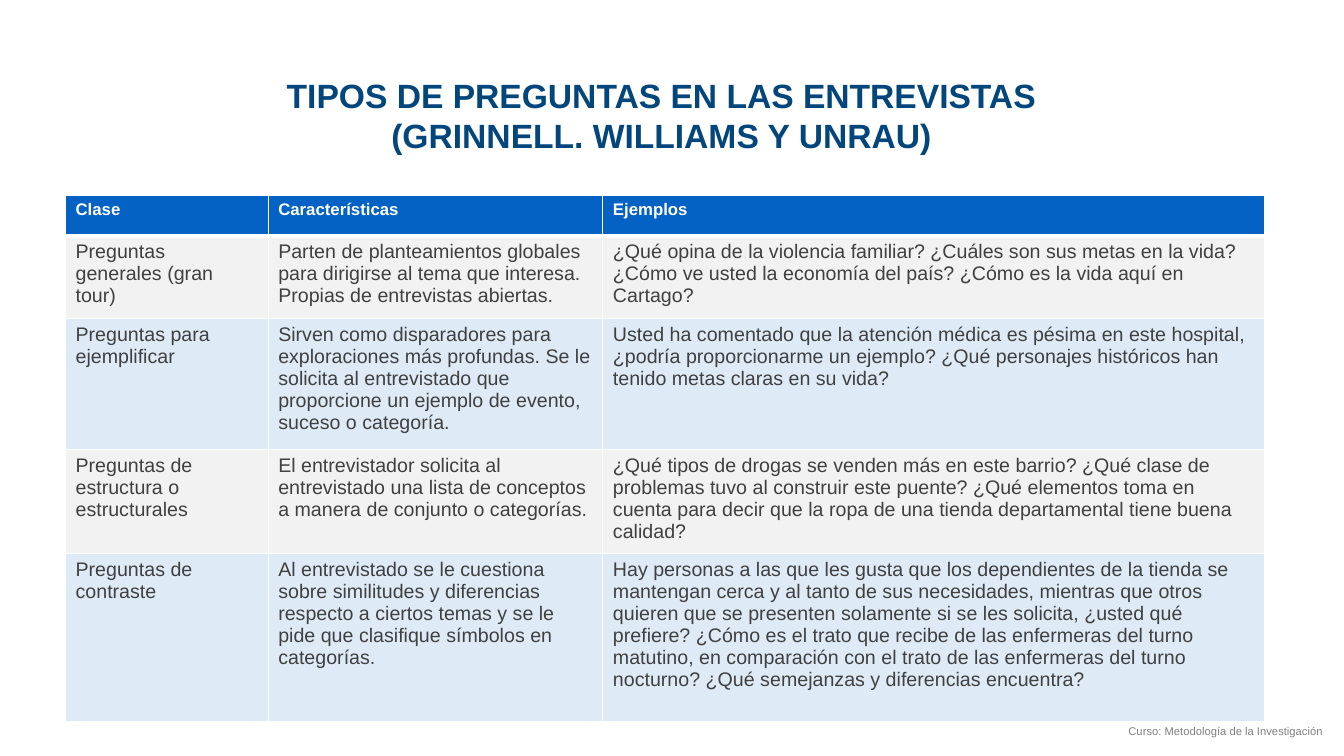
from lxml.etree import SubElement
from pptx import Presentation
from pptx.dml.color import RGBColor
from pptx.enum.text import MSO_ANCHOR, PP_ALIGN
from pptx.oxml.ns import qn
from pptx.util import Inches, Pt

TITLE = "TIPOS DE PREGUNTAS EN LAS ENTREVISTAS\v(GRINNELL. WILLIAMS Y UNRAU)"
FOOTER = "Curso: Metodología de la Investigación"
ROWS = [
    ("Clase", "Características", "Ejemplos"),
    (
        "Preguntas\ngenerales (gran tour)",
        "Parten de planteamientos globales para dirigirse al tema que interesa.\n"
        "Propias de entrevistas abiertas.",
        "¿Qué opina de la violencia familiar? ¿Cuáles son sus metas en la vida? "
        "¿Cómo ve usted la economía del país? ¿Cómo es la vida aquí en Cartago?",
    ),
    (
        "Preguntas para ejemplificar",
        "Sirven como disparadores para\n"
        "exploraciones más profundas. Se le solicita al entrevistado que\n"
        "proporcione un ejemplo de evento, suceso o categoría.",
        "Usted ha comentado que la atención médica es pésima en este hospital, "
        "¿podría proporcionarme un ejemplo? ¿Qué personajes históricos han "
        "tenido metas claras en su vida?",
    ),
    (
        "Preguntas de\nestructura o\nestructurales",
        "El entrevistador solicita al\n"
        "entrevistado una lista de conceptos a manera de conjunto o categorías.",
        "¿Qué tipos de drogas se venden más en este barrio? ¿Qué clase de "
        "problemas tuvo al construir este puente? ¿Qué elementos toma en cuenta "
        "para decir que la ropa de una tienda departamental tiene buena calidad?",
    ),
    (
        "Preguntas de\ncontraste",
        "Al entrevistado se le cuestiona\nsobre similitudes y diferencias\n"
        "respecto a ciertos temas y se le\npide que clasifique símbolos en\n"
        "categorías.",
        "Hay personas a las que les gusta que los dependientes de la tienda se "
        "mantengan cerca y al tanto de sus necesidades, mientras que otros "
        "quieren que se presenten solamente si se les solicita, ¿usted qué "
        "prefiere? ¿Cómo es el trato que recibe de las enfermeras del turno "
        "matutino, en comparación con el trato de las enfermeras del turno "
        "nocturno? ¿Qué semejanzas y diferencias encuentra?",
    ),
]
COL_WIDTHS = (2.01, 3.32, 6.56)
ROW_HEIGHTS = (0.4, 0.82, 1.3, 1.01, 1.66)

THEME = {
    "font": "Arial",
    "title": (24, "02467C", True),
    "head": (12, "FFFFFF", True),
    "body": (14, "404040", False),
    "footer": (8, "808080", False),
    "head_fill": "0362C3",
    "bands": ("F2F2F2", "DEEBF7"),
    "border": "FFFFFF",
}


def write(tf, text, style, align=PP_ALIGN.LEFT):
    size, color, bold = THEME[style]
    tf.word_wrap = True
    for i, line in enumerate(text.split("\n")):
        p = tf.add_paragraph() if i else tf.paragraphs[0]
        p.text = line
        p.alignment = align
        p.font.name = THEME["font"]
        p.font.size = Pt(size)
        p.font.bold = bold
        p.font.color.rgb = RGBColor.from_string(color)


def add_text(slide, box, text, style, align, anchor=MSO_ANCHOR.TOP):
    tf = slide.shapes.add_textbox(*map(Inches, box)).text_frame
    tf.vertical_anchor = anchor
    write(tf, text, style, align)


def set_borders(cell, widths):
    tc_pr = cell._tc.get_or_add_tcPr()
    for i, (side, width) in enumerate(widths.items()):
        ln = tc_pr.makeelement(qn(f"a:{side}"), {"w": str(Pt(width))})
        fill = SubElement(ln, qn("a:solidFill"))
        SubElement(fill, qn("a:srgbClr"), val=THEME["border"])
        tc_pr.insert(i, ln)


def add_question_table(slide):
    size = (sum(COL_WIDTHS), sum(ROW_HEIGHTS))
    table = slide.shapes.add_table(
        len(ROWS), len(COL_WIDTHS), *map(Inches, (0.65, 1.94, *size))
    ).table
    for col, width in zip(table.columns, COL_WIDTHS):
        col.width = Inches(width)
    for r, (texts, height) in enumerate(zip(ROWS, ROW_HEIGHTS)):
        table.rows[r].height = Inches(height)
        fill = THEME["bands"][(r - 1) % 2] if r else THEME["head_fill"]
        top, bottom = (3 if r == 1 else 1), (1 if r else 3)
        for c, text in enumerate(texts):
            cell = table.cell(r, c)
            cell.fill.solid()
            cell.fill.fore_color.rgb = RGBColor.from_string(fill)
            set_borders(cell, {"lnL": 1, "lnR": 1, "lnT": top, "lnB": bottom})
            write(cell.text_frame, text, "body" if r else "head")


def main():
    prs = Presentation()
    prs.slide_width, prs.slide_height = Inches(13.33), Inches(7.5)
    s = prs.slides.add_slide(prs.slide_layouts[6])
    add_text(s, (0, 0.63, 13.12, 1.02), TITLE, "title", PP_ALIGN.CENTER, MSO_ANCHOR.MIDDLE)
    add_question_table(s)
    add_text(s, (9.74, 7.14, 3.48, 0.24), FOOTER, "footer", PP_ALIGN.RIGHT)
    prs.save("out.pptx")


if __name__ == "__main__":
    main()
